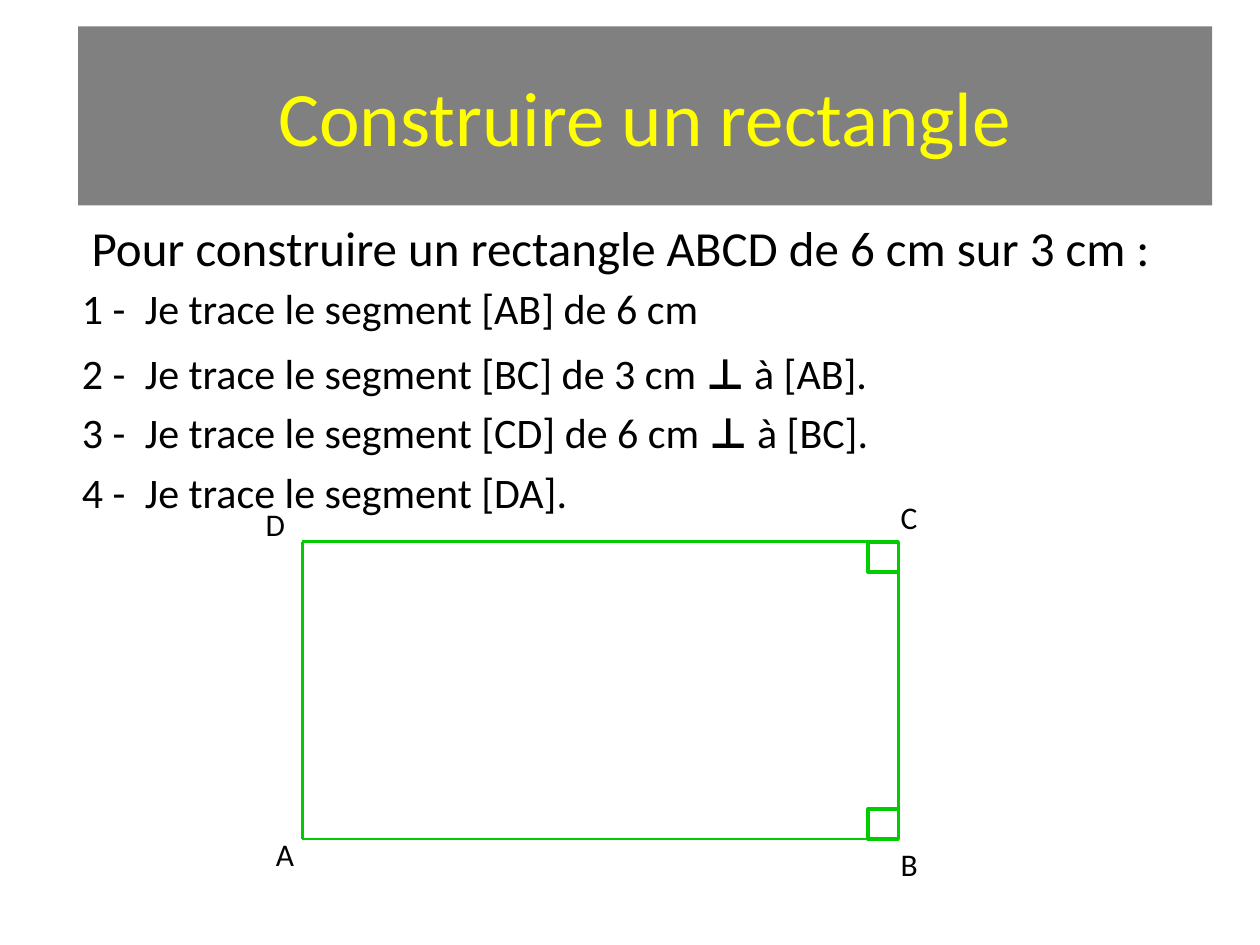
from dataclasses import dataclass

from lxml import etree
from pptx import Presentation
from pptx import util as u
from pptx.dml.color import RGBColor
from pptx.enum import shapes, text
from pptx.oxml import ns


@dataclass(frozen=True)
class Theme:
    font: str = "Calibri"
    banner: str = "808080"
    heading: str = "FFFF00"
    ink: str = "000000"
    paper: str = "FFFFFF"
    figure: str = "00CC00"
    title_size: float = 44
    intro_size: float = 28
    step_size: float = 24
    label_size: float = 18
    step_pitch: float = 34
    side_width: float = 1.5
    mark_width: float = 2


class SlideBuilder:
    COLUMNS, ROWS = 100, 75

    def __init__(self, deck, theme):
        self.deck = deck
        self.theme = theme
        self.slide = deck.slides.add_slide(deck.slide_layouts[1])
        background = self.slide.background.fill
        background.solid()
        background.fore_color.rgb = RGBColor.from_string(theme.paper)

    def x(self, columns):
        return u.Emu(round(self.deck.slide_width * columns / self.COLUMNS))

    def y(self, rows):
        return u.Emu(round(self.deck.slide_height * rows / self.ROWS))

    def box(self, left, top, width, height):
        return self.x(left), self.y(top), self.x(width), self.y(height)

    def place(self, holder, area):
        holder.left, holder.top, holder.width, holder.height = self.box(*area)

    def run(self, paragraph, words, size, color, bold=False):
        part = paragraph.add_run()
        part.text = words
        part.font.name = self.theme.font
        part.font.size = u.Pt(size)
        part.font.bold = bold
        part.font.color.rgb = RGBColor.from_string(color)

    def title(self, words, area):
        banner = self.slide.shapes.title
        self.place(banner, area)
        banner.fill.solid()
        banner.fill.fore_color.rgb = RGBColor.from_string(self.theme.banner)
        frame = banner.text_frame
        frame.auto_size = text.MSO_AUTO_SIZE.NONE
        frame.vertical_anchor = text.MSO_ANCHOR.MIDDLE
        heading = frame.paragraphs[0]
        heading.alignment = text.PP_ALIGN.CENTER
        self.run(heading, words, self.theme.title_size, self.theme.heading)

    def steps(self, items, area, indent):
        body = self.slide.placeholders[1]
        self.place(body, area)
        frame = body.text_frame
        frame.auto_size = text.MSO_AUTO_SIZE.NONE
        for number, pieces in enumerate(items, 1):
            step = frame.paragraphs[0] if number == 1 else frame.add_paragraph()
            step.alignment = text.PP_ALIGN.JUSTIFY
            step.line_spacing = u.Pt(self.theme.step_pitch)
            step.space_before = u.Pt(3 if number == 2 else 0)
            properties = step._p.get_or_add_pPr()
            properties.set("marL", str(self.x(indent)))
            properties.set("indent", str(-self.x(indent)))
            etree.SubElement(properties, ns.qn("a:buNone"))
            self.run(step, f"{number} -\t", self.theme.step_size, self.theme.ink)
            for piece in pieces:
                self.run(step, piece, self.theme.step_size, self.theme.ink,
                         bold=piece.startswith("⊥"))

    def label(self, words, area, size, alignment=text.PP_ALIGN.LEFT):
        frame = self.slide.shapes.add_textbox(*self.box(*area)).text_frame
        frame.word_wrap = True
        caption = frame.paragraphs[0]
        caption.alignment = alignment
        self.run(caption, words, size, self.theme.ink)

    def side(self, start, end):
        segment = self.slide.shapes.add_connector(
            shapes.MSO_CONNECTOR.STRAIGHT,
            self.x(start[0]), self.y(start[1]), self.x(end[0]), self.y(end[1]))
        segment.line.color.rgb = RGBColor.from_string(self.theme.figure)
        segment.line.width = u.Pt(self.theme.side_width)
        etree.SubElement(segment._element.spPr, ns.qn("a:effectLst"))

    def right_angle(self, area):
        mark = self.slide.shapes.add_shape(
            shapes.MSO_SHAPE.RECTANGLE, *self.box(*area))
        mark.shadow.inherit = False
        mark.fill.solid()
        mark.fill.fore_color.rgb = RGBColor.from_string(self.theme.paper)
        mark.line.color.rgb = RGBColor.from_string(self.theme.figure)
        mark.line.width = u.Pt(self.theme.mark_width)


def main():
    deck = Presentation()
    deck.slide_width, deck.slide_height = u.Inches(10), u.Inches(7.5)
    theme = Theme()
    page = SlideBuilder(deck, theme)

    page.title("Construire un rectangle", (6.2, 2.1, 90, 14.2))
    page.label("Pour construire un rectangle ABCD de 6 cm sur 3 cm :",
               (6.3, 16.8, 89.4, 5.3), theme.intro_size,
               text.PP_ALIGN.JUSTIFY)
    page.steps([
        ["Je trace le segment [AB] de 6 cm"],
        ["Je trace le segment [BC] de 3 cm ", "⊥ ", "à [AB]."],
        ["Je trace le segment [CD] de 6 cm ", "⊥ ", "à [BC]."],
        ["Je trace le segment [DA]."],
    ], (5.5, 21.2, 89.4, 20.2), indent=5)

    left, right, top, bottom = 24, 71.3, 43, 66.6
    corners = {"A": (left, bottom), "B": (right, bottom),
               "C": (right, top), "D": (left, top)}
    for start, end in ("AB", "BC", "DC", "DA"):
        page.side(corners[start], corners[end])

    mark = 2.4
    for mark_top in (top, bottom - mark):
        page.right_angle((right - mark, mark_top, mark, mark))

    label_places = {"A": (20.9, 65.8), "B": (70.5, 66.6),
                    "C": (70.5, 39), "D": (20.1, 39.6)}
    for vertex, (label_left, label_top) in label_places.items():
        page.label(vertex, (label_left, label_top, 3.9, 4), theme.label_size)

    deck.save("out.pptx")


if __name__ == "__main__":
    main()
